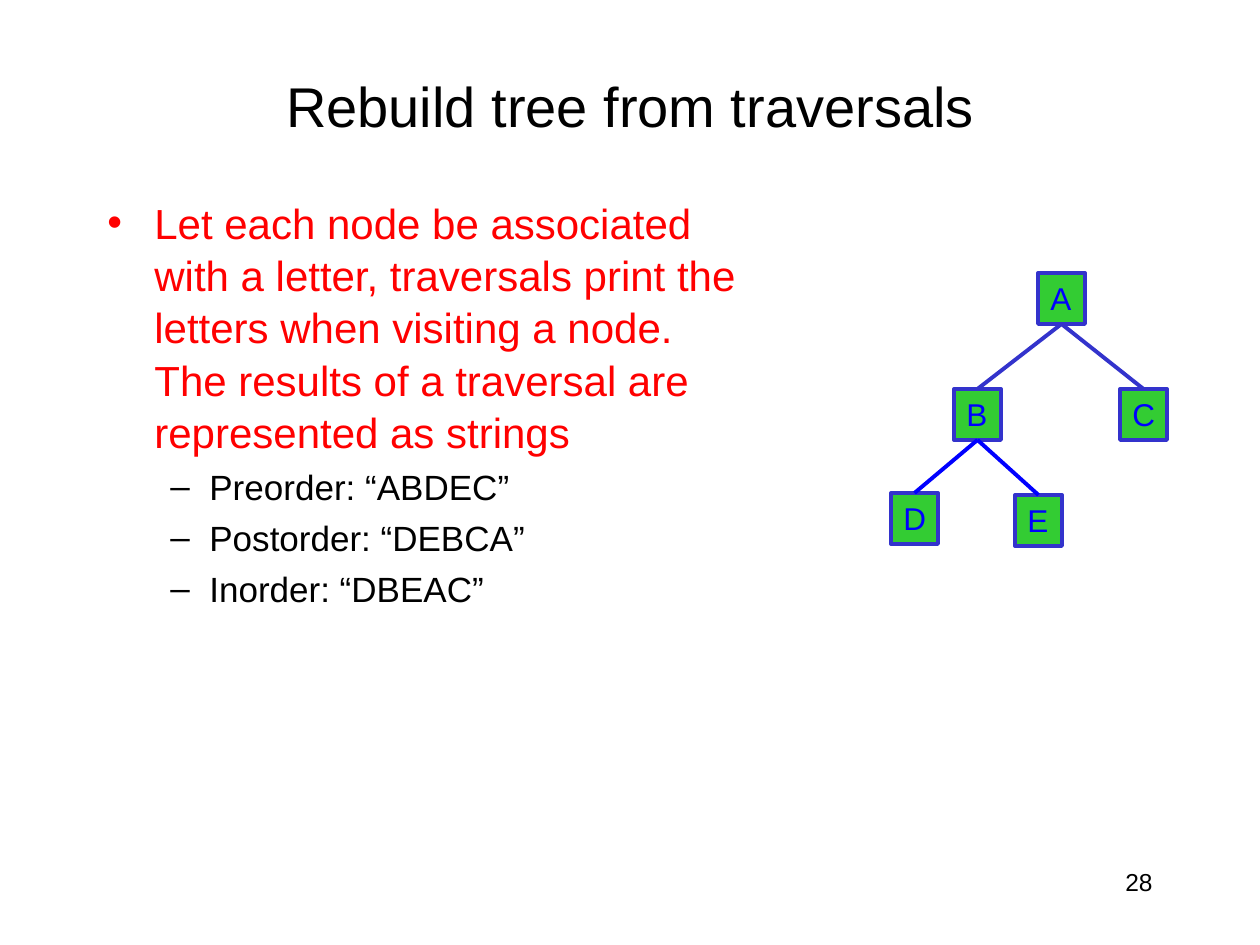
from lxml.etree import SubElement
from pptx import Presentation
from pptx.dml.color import RGBColor
from pptx.enum.shapes import MSO_CONNECTOR as Connector, MSO_SHAPE as Shape
from pptx.enum.text import MSO_ANCHOR as Anchor, MSO_AUTO_SIZE as AutoSize, PP_ALIGN as Align
from pptx.oxml.ns import qn
from pptx.util import Pt

PX = 914400 / 126
BLACK = RGBColor(0x00, 0x00, 0x00)
RED = RGBColor(0xFF, 0x00, 0x00)
BLUE = RGBColor(0x00, 0x00, 0xFF)
INDIGO = RGBColor(0x33, 0x33, 0xCC)
GREEN = RGBColor(0x33, 0xCC, 0x33)


def px(*lengths):
    return [round(length * PX) for length in lengths]


def add_text(paragraph, text, size, color):
    run = paragraph.add_run()
    run.text = text
    run.font.name = "Arial"
    run.font.size = Pt(size)
    run.font.color.rgb = color


deck = Presentation()
deck.slide_width, deck.slide_height = px(1260, 945)
slide = deck.slides.add_slide(deck.slide_layouts[6])
shapes = slide.shapes

# Slide number
number = shapes.add_textbox(*px(903, 861, 262, 63)).text_frame
number.word_wrap = True
number.paragraphs[0].alignment = Align.RIGHT
add_text(number.paragraphs[0], "28", 14, BLACK)

# Title
title = shapes.add_textbox(*px(95, 53, 1071, 105)).text_frame
title.word_wrap = True
title.vertical_anchor = Anchor.MIDDLE
title.paragraphs[0].alignment = Align.CENTER
add_text(title.paragraphs[0], "Rebuild tree from traversals", 32, BLACK)

# Explanation: text, level, bullet, left margin, hanging indent, size, colour
points = [
    ("Let each node be associated with a letter, traversals print the letters "
     "when visiting a node. The results of a traversal are represented as strings",
     0, "•", 47, 47, 24, RED),
    ("Preorder: “ABDEC”", 1, "–", 102, 39, 20, BLACK),
    ("Postorder: “DEBCA”", 1, "–", 102, 39, 20, BLACK),
    ("Inorder: “DBEAC”", 1, "–", 102, 39, 20, BLACK),
]
body = shapes.add_textbox(*px(95, 189, 661, 651)).text_frame
body.word_wrap = True
for i, (text, level, bullet, margin, hang, size, color) in enumerate(points):
    point = body.add_paragraph() if i else body.paragraphs[0]
    point.level = level
    point.line_spacing = 1.04
    point.space_before = Pt(size * 0.2)
    add_text(point, text, size, color)
    properties = point._p.get_or_add_pPr()
    left, indent = px(margin, -hang)
    properties.set("marL", str(left))
    properties.set("indent", str(indent))
    SubElement(properties, qn("a:buFont"), typeface="Arial")
    SubElement(properties, qn("a:buChar"), char=bullet)

# Tree nodes
places = {"A": (1038, 273), "B": (954, 389), "C": (1120, 389), "E": (1015, 495), "D": (891, 493)}
nodes = {}
for letter, (left, top) in places.items():
    node = shapes.add_shape(Shape.RECTANGLE, *px(left, top, 47, 51))
    node.shadow.inherit = False
    node.fill.solid()
    node.fill.fore_color.rgb = GREEN
    node.line.color.rgb = INDIGO
    node.line.width = Pt(2.25)
    label = node.text_frame
    label.word_wrap = False
    label.auto_size = AutoSize.SHAPE_TO_FIT_TEXT
    label.vertical_anchor = Anchor.TOP
    label.paragraphs[0].alignment = Align.LEFT
    add_text(label.paragraphs[0], letter, 18, BLUE)
    nodes[letter] = node

# Tree edges, from the bottom of the parent to the top of the child
for parent, child, color in [("A", "B", INDIGO), ("A", "C", INDIGO), ("B", "D", BLUE), ("B", "E", BLUE)]:
    edge = shapes.add_connector(Connector.STRAIGHT, 0, 0, 0, 0)
    edge.begin_connect(nodes[parent], 2)
    edge.end_connect(nodes[child], 0)
    edge.line.color.rgb = color
    edge.line.width = Pt(2.25)
    SubElement(edge._element.spPr, qn("a:effectLst"))

deck.save("out.pptx")
